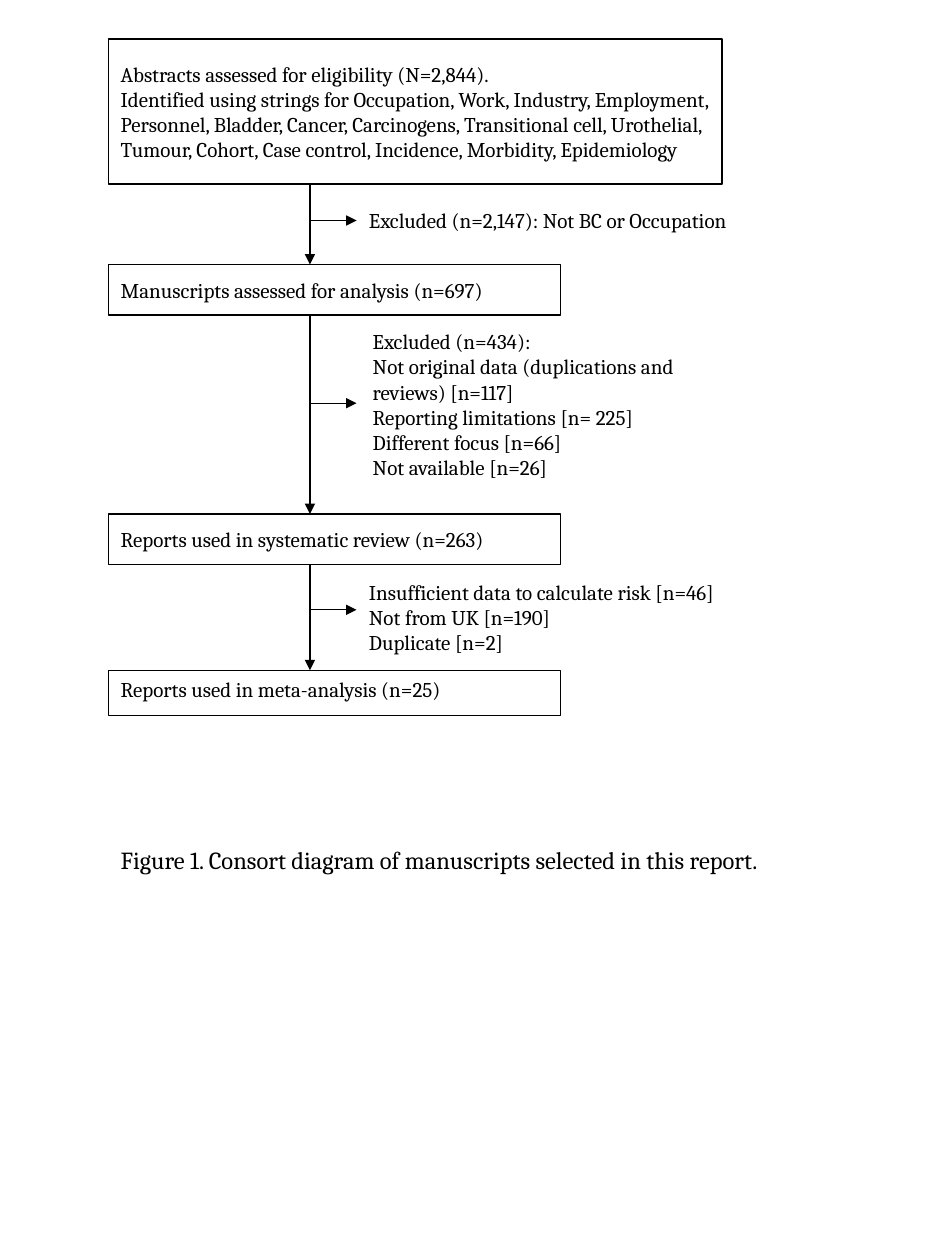
from pptx import Presentation
from pptx.dml.color import RGBColor
from pptx.enum import shapes, text
from pptx.oxml.ns import qn
from pptx.util import Inches, Pt
from lxml import etree

COLORS = {"ink": "000000", "paper": "FFFFFF"}
FONT = "Cambria"
LEFT, STEM_X, BRANCH = 0.86, 2.46, 0.36
MIDDLE, TOP = text.MSO_ANCHOR.MIDDLE, text.MSO_ANCHOR.TOP

# top, width, height, anchor, paragraphs
STAGES = [
    (0.31, 4.87, 1.15, MIDDLE, [
        "Abstracts assessed for eligibility (N=2,844).",
        "Identified using strings for Occupation, Work, Industry, Employment, "
        "Personnel, Bladder, Cancer, Carcinogens, Transitional cell, Urothelial, "
        "Tumour, Cohort, Case control, Incidence, Morbidity, Epidemiology"]),
    (2.1, 3.59, 0.4, MIDDLE, ["Manuscripts assessed for analysis (n=697)"]),
    (4.08, 3.59, 0.4, MIDDLE, ["Reports used in systematic review (n=263)"]),
    (5.32, 3.59, 0.36, TOP, ["Reports used in meta-analysis (n=25)"]),
]
# branch y, left, top, height, paragraphs
EXCLUSIONS = [
    (1.75, 2.83, 1.6, 0.28, ["Excluded (n=2,147): Not BC or Occupation"]),
    (3.2, 2.86, 2.56, 1.3, [
        "Excluded (n=434):", "Not original data (duplications and",
        "reviews) [n=117]", "Reporting limitations [n= 225]",
        "Different focus [n=66]", "Not available [n=26]"]),
    (4.84, 2.83, 4.55, 0.66, [
        "Insufficient data to calculate risk [n=46]", "Not from UK [n=190]",
        "Duplicate [n=2]"]),
]
CAPTION = "Figure 1. Consort diagram of manuscripts selected in this report."


def color(name):
    return RGBColor.from_string(COLORS[name])


def write(sp, lines, size=12, anchor=TOP):
    tf = sp.text_frame
    tf.word_wrap = True
    tf.vertical_anchor = anchor
    for i, line in enumerate(lines):
        p = tf.paragraphs[0] if i == 0 else tf.add_paragraph()
        p.text = line
        p.alignment = text.PP_ALIGN.LEFT
        p.font.name, p.font.size = FONT, Pt(size)
        p.font.color.rgb = color("ink")


def add_text(s, box, lines, size=12):
    write(s.shapes.add_textbox(*map(Inches, box)), lines, size)


def add_stage(s, box, lines, anchor):
    sp = s.shapes.add_shape(shapes.MSO_SHAPE.RECTANGLE, *map(Inches, box))
    sp.shadow.inherit = False
    sp.fill.solid()
    sp.fill.fore_color.rgb = color("paper")
    sp.line.color.rgb = color("ink")
    sp.line.width = Pt(0.75)
    write(sp, lines, anchor=anchor)


def add_arrow(s, *ends):
    """Draw an arrow through x1, y1, x2, y2 with its head at the second point."""
    cx = s.shapes.add_connector(shapes.MSO_CONNECTOR.STRAIGHT, *map(Inches, ends))
    cx.line.color.rgb = color("ink")
    cx.line.width = Pt(0.75)
    etree.SubElement(cx.line._get_or_add_ln(), qn("a:tailEnd"), type="triangle")
    etree.SubElement(cx._element.spPr, qn("a:effectLst"))


def main():
    prs = Presentation()
    prs.slide_width, prs.slide_height = Inches(7.5), Inches(10)
    s = prs.slides.add_slide(prs.slide_layouts[6])

    for top, width, height, anchor, lines in STAGES:
        add_stage(s, (LEFT, top, width, height), lines, anchor)
    for (top, _, height, *_), following in zip(STAGES, STAGES[1:]):
        add_arrow(s, STEM_X, top + height, STEM_X, following[0])
    for y, left, top, height, lines in EXCLUSIONS:
        add_arrow(s, STEM_X + 0.01, y, STEM_X + 0.01 + BRANCH, y)
        add_text(s, (left, top, 3.78, height), lines)
    add_text(s, (LEFT, 6.66, 5.63, 0.34), [CAPTION], size=14)

    prs.save("out.pptx")


if __name__ == "__main__":
    main()
